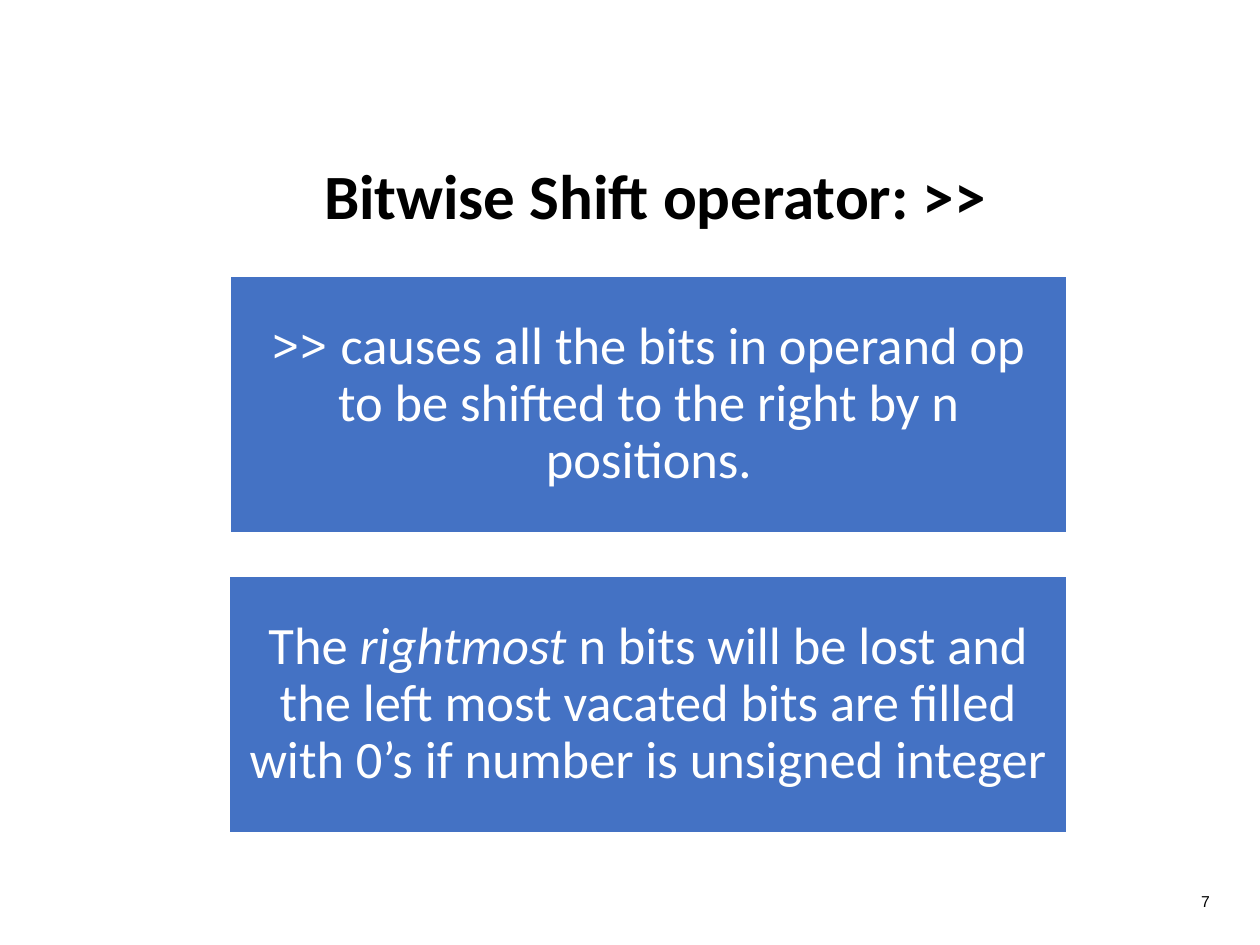
import pptx
import pptx.dml.color
import pptx.enum.shapes
import pptx.enum.text
import pptx.util
from pptx.util import Inches

ALIGN = pptx.enum.text.PP_ALIGN
MIDDLE = pptx.enum.text.MSO_ANCHOR.MIDDLE
BLACK, WHITE, BLUE = "000000", "FFFFFF", "4472C4"


def color(hex_string):
    return pptx.dml.color.RGBColor.from_string(hex_string)


def place(shape, box):
    shape.left, shape.top, shape.width, shape.height = map(Inches, box)


def write(shape, runs, size, hex_string, align, spacing=1.0, bold=False):
    """Fill a shape with one paragraph of (text, font name, italic) runs."""
    frame = shape.text_frame
    frame.word_wrap = True
    frame.auto_size = pptx.enum.text.MSO_AUTO_SIZE.NONE
    frame.vertical_anchor = MIDDLE
    paragraph = frame.paragraphs[0]
    paragraph.alignment = align
    paragraph.line_spacing = spacing
    for text, font_name, italic in runs:
        run = paragraph.add_run()
        run.text = text
        run.font.name = font_name
        run.font.size = pptx.util.Pt(size)
        run.font.bold = bold
        run.font.italic = italic
        run.font.color.rgb = color(hex_string)


def add_title(slide, box, text):
    title = slide.shapes.title
    place(title, box)
    write(title, [(text, "Calibri", False)], 36, BLACK, ALIGN.CENTER, 0.9, True)


def add_statement(slide, box, runs):
    shape = slide.shapes.add_shape(
        pptx.enum.shapes.MSO_SHAPE.RECTANGLE, *map(Inches, box))
    shape.shadow.inherit = False
    shape.fill.solid()
    shape.fill.fore_color.rgb = color(BLUE)
    shape.line.color.rgb = color(WHITE)
    shape.line.width = pptx.util.Pt(1)
    frame = shape.text_frame
    frame.margin_left = frame.margin_right = Inches(0.12)
    frame.margin_top = frame.margin_bottom = Inches(0.12)
    write(shape, runs, 30, WHITE, ALIGN.CENTER, 0.9)


def add_slide_number(slide, box, text):
    number = slide.shapes.add_textbox(*map(Inches, box))
    write(number, [(text, "Arial", False)], 9, BLACK, ALIGN.RIGHT)


def main():
    presentation = pptx.Presentation()
    presentation.slide_width = Inches(10)
    presentation.slide_height = Inches(7.5)
    slide = presentation.slides.add_slide(presentation.slide_layouts[5])

    # Title
    add_title(slide, (2.26, 1.3, 5.88, 0.56), "Bitwise Shift operator: >>")

    # What the operator does
    add_statement(slide, (1.83, 2.19, 6.64, 2.04), [
        (">>", "League Spartan", False),
        (" causes all the bits in operand op to be shifted to the right "
         "by n positions.", "Calibri", False),
    ])

    # What happens to the bits at each end
    add_statement(slide, (1.82, 4.57, 6.65, 2.04), [
        ("The ", "Calibri", False),
        ("rightmost ", "Calibri", True),
        ("n bits will be lost and the left most vacated bits are filled "
         "with 0’s if number is unsigned integer", "Calibri", False),
    ])

    # Slide number
    add_slide_number(slide, (9.31, 6.95, 0.39, 0.4), "7")

    presentation.save("out.pptx")


if __name__ == "__main__":
    main()
